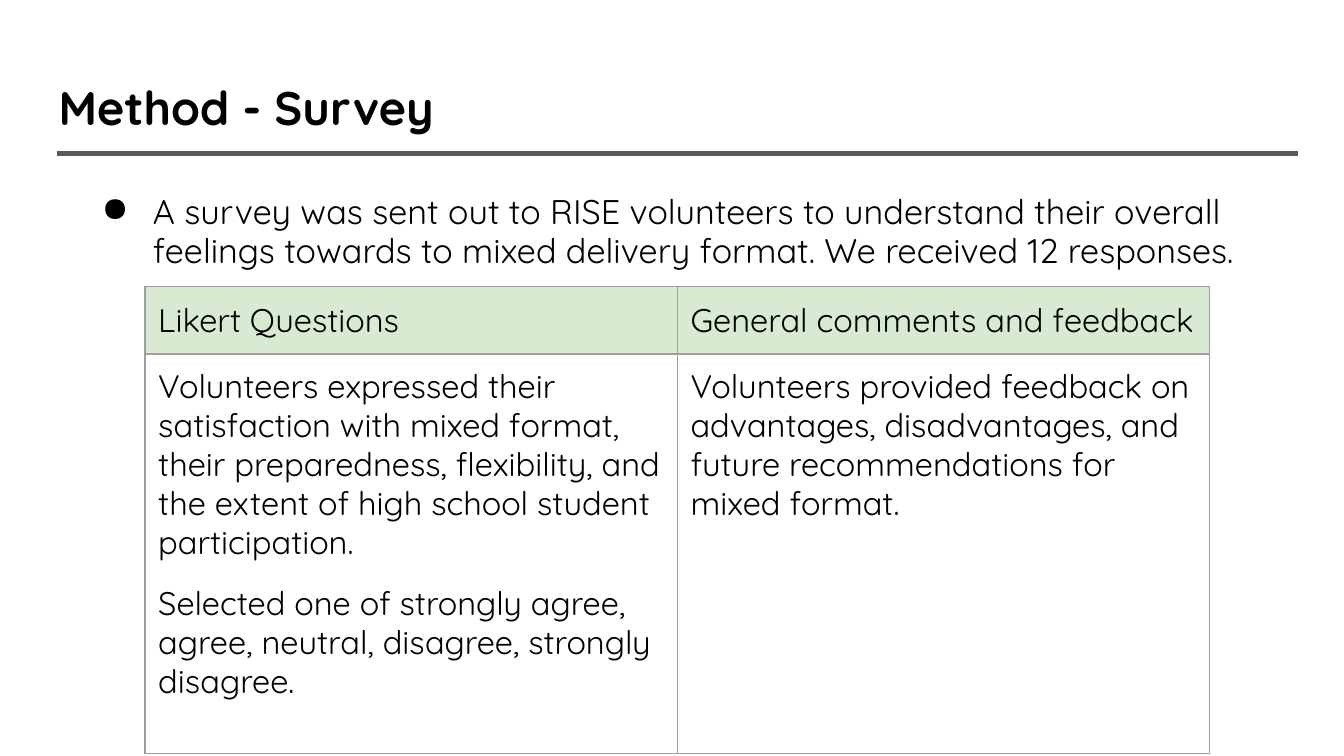
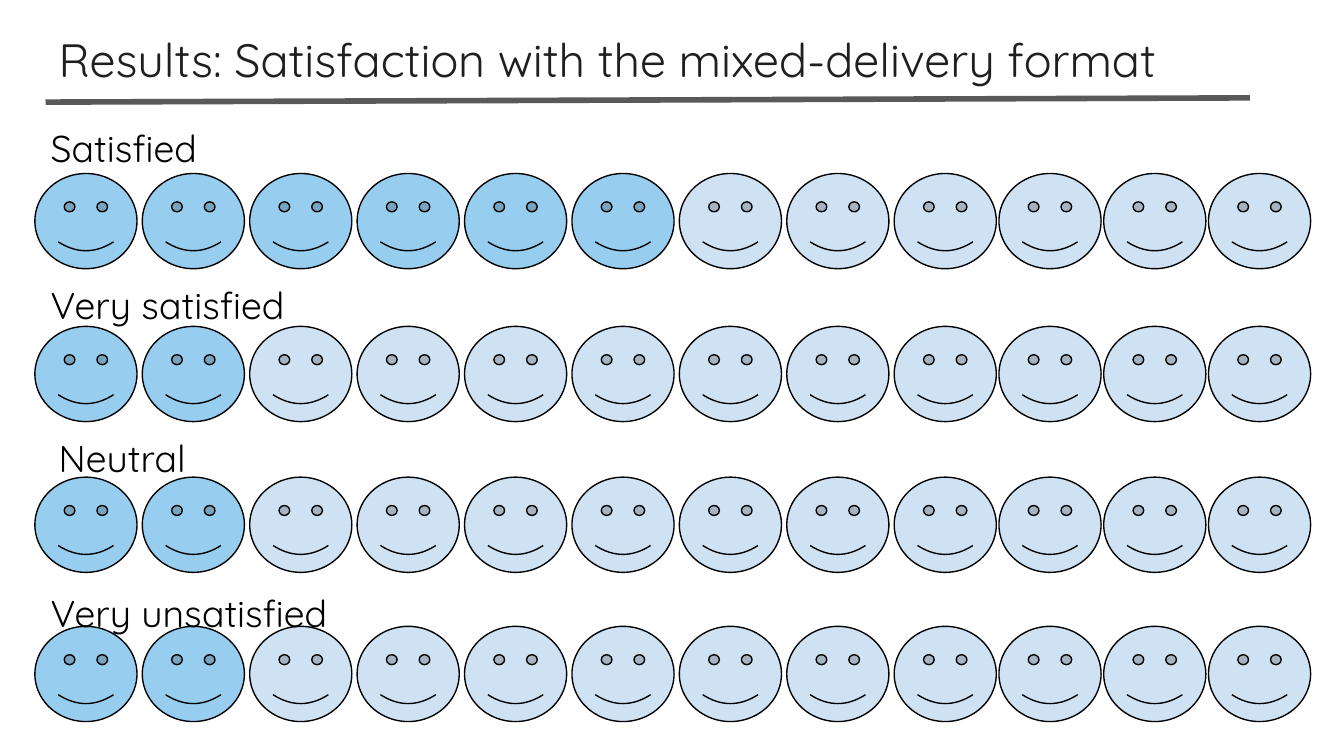
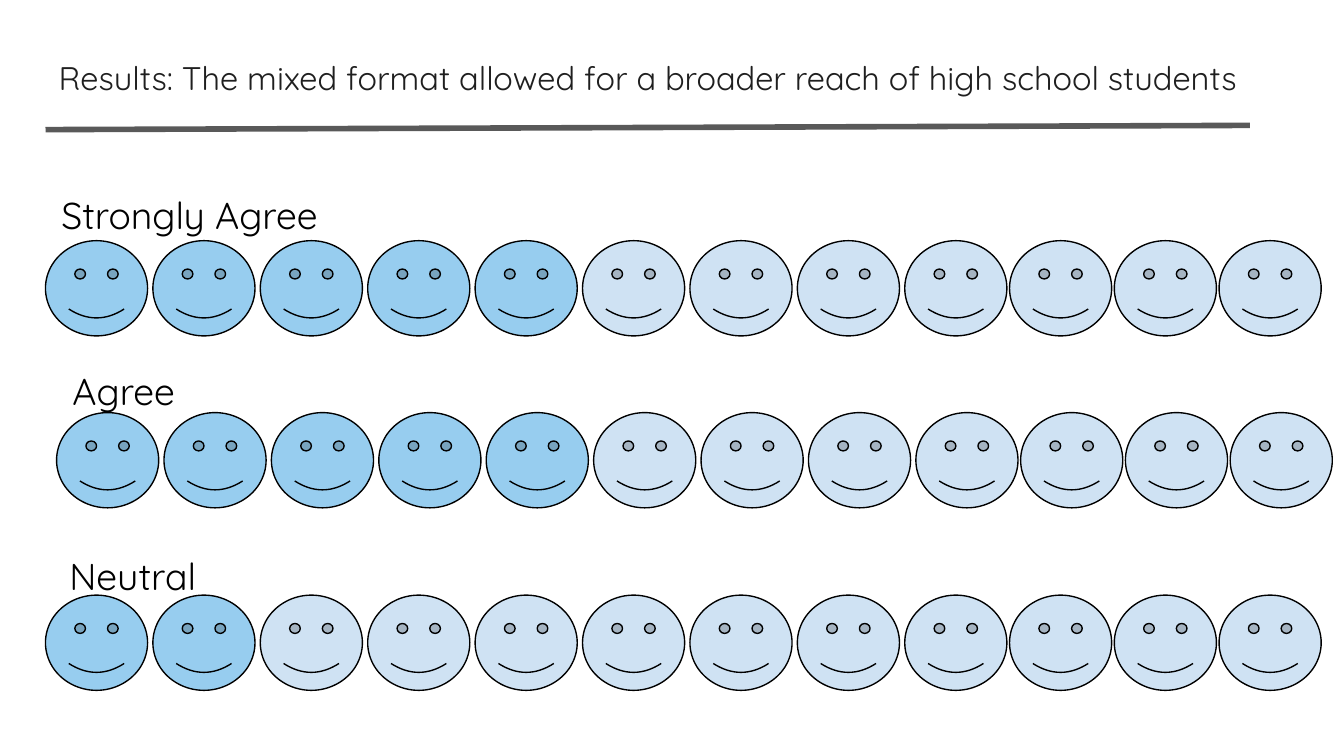
from lxml.etree import SubElement
from pptx import Presentation
from pptx.dml.color import RGBColor
from pptx.enum.shapes import MSO_CONNECTOR, MSO_SHAPE
from pptx.oxml.ns import qn
from pptx.util import Cm, Pt

INK = {
    "text": "000000",
    "soft": "1F1F1F",
    "rule": "595959",
    "grid": "9E9E9E",
    "head": "D9EAD3",
    "full": "97CDEF",
    "pale": "CFE2F3",
    "page": "FFFFFF",
}
FONT = "Quicksand"
PAD = Cm(0.25)
FACES, WIDE, TALL = 12, 1.93, 1.8
STEP, TRIM, SPLIT = 2.03, 0.05, 8
SPOTS = [(0.05, -1.17), (0.05, -1.09), (0.2, -1.04), (0.05, -0.94)]
LONG = (23.09, 1.37)


def tint(name):
    return RGBColor.from_string(INK[name])


def write(frame, *texts, size=20, color="text", bold=False, lead=None, gap=0):
    frame.word_wrap = True
    frame.margin_left = frame.margin_right = PAD
    frame.margin_top = frame.margin_bottom = PAD
    for i, text in enumerate(texts):
        para = frame.add_paragraph() if i else frame.paragraphs[0]
        if lead:
            para.line_spacing = lead
        if i:
            para.space_before = Pt(gap)
        run = para.add_run()
        run.text = text
        font = run.font
        font.name, font.size, font.bold = FONT, Pt(size), bold
        font.color.rgb = tint(color)
    return frame


def label(slide, box, text, **style):
    shape = slide.shapes.add_textbox(*map(Cm, box))
    return write(shape.text_frame, text, **style)


def header(slide, text, top, rule, **style):
    label(slide, (0.86, top, 23.67, 1.6), text, **style)
    left, right, start, end = rule
    line = slide.shapes.add_connector(
        MSO_CONNECTOR.STRAIGHT, Cm(left), Cm(top + start), Cm(right), Cm(top + end))
    line.line.color.rgb = tint("rule")
    line.line.width = Pt(3)
    SubElement(line._element.spPr, qn("a:effectLst"))


def bullet(frame):
    props = frame.paragraphs[0]._p.get_or_add_pPr()
    props.set("marL", str(Cm(1.27)))
    props.set("indent", str(Cm(-0.97)))
    color = SubElement(props, qn("a:buClr"))
    SubElement(color, qn("a:srgbClr"), val=INK["text"])
    SubElement(props, qn("a:buChar"), char="●")


def border(cell):
    props = cell._tc.get_or_add_tcPr()
    for i, side in enumerate(("lnL", "lnR", "lnT", "lnB")):
        line = props.makeelement(qn("a:" + side), {"w": str(Pt(0.75))})
        fill = SubElement(line, qn("a:solidFill"))
        SubElement(fill, qn("a:srgbClr"), val=INK["grid"])
        props.insert(i, line)


def grid(slide, box, rows, highs):
    left, top, width, height = map(Cm, box)
    table = slide.shapes.add_table(len(rows), len(rows[0]), left, top, width, height).table
    table.first_row = table.horz_banding = False
    for r, (row, high) in enumerate(zip(rows, highs)):
        table.rows[r].height = Cm(high)
        for c, texts in enumerate(row):
            cell = table.cell(r, c)
            cell.margin_left = cell.margin_right = PAD
            cell.margin_top = cell.margin_bottom = PAD
            write(cell.text_frame, *texts, size=17.5, lead=0.95 if r else None, gap=12)
            if r:
                cell.fill.background()
            else:
                cell.fill.solid()
                cell.fill.fore_color.rgb = tint("head")
            border(cell)


def face(slide, left, top, color):
    shape = slide.shapes.add_shape(
        MSO_SHAPE.SMILEY_FACE, Cm(left), Cm(top), Cm(WIDE), Cm(TALL))
    shape.shadow.inherit = False
    shape.fill.solid()
    shape.fill.fore_color.rgb = tint(color)
    shape.line.color.rgb = tint("text")
    shape.line.width = Pt(0.75)


def crowd(slide, left, top, count):
    for i in range(FACES):
        shift = STEP * i - TRIM * max(i - SPLIT, 0)
        face(slide, left + shift, top, "full" if i < count else "pale")


def survey(slide):
    header(slide, "Method - Survey", 1.24, (1.07, 24.54, 1.66, 1.66), size=25.2, bold=True)
    grid(slide, (2.74, 5.41, 20.12, 8.84), [
        [["Likert Questions"], ["General comments and feedback"]],
        [["Volunteers expressed their satisfaction with mixed format, their "
          "preparedness, flexibility, and the extent of high school student "
          "participation.",
          "Selected one of strongly agree, agree, neutral, disagree, strongly disagree."],
         ["Volunteers provided feedback on advantages, disadvantages, and future "
          "recommendations for mixed format."]],
    ], (1.28, 7.56))
    bullet(label(
        slide, (1.37, 3.4, 23.52, 2.01),
        "A survey was sent out to RISE volunteers to understand their overall feelings "
        "towards to mixed delivery format. We received 12 responses.",
        size=18.3, lead=0.95))


def result(slide, title, top, size, rows):
    for _, count, left, high, _ in rows:
        crowd(slide, left, high, count)
    header(slide, title, top, (0.86, 23.62, 1.6, 1.52), size=size, color="soft")
    for (text, _, left, high, area), (dx, dy) in zip(rows, SPOTS):
        label(slide, (left + dx, high + dy, *area), text)


def main():
    deck = Presentation()
    deck.slide_width, deck.slide_height = Cm(25.4), Cm(14.29)

    def page():
        slide = deck.slides.add_slide(deck.slide_layouts[6])
        slide.background.fill.solid()
        slide.background.fill.fore_color.rgb = tint("page")
        return slide

    survey(page())
    result(page(), "Results: Satisfaction with the mixed-delivery format", 0.33, 25, [
        ("Satisfied", 6, 0.66, 3.28, (3.99, 0.97)),
        ("Very satisfied", 2, 0.66, 6.17, LONG),
        ("Neutral", 2, 0.66, 9.02, LONG),
        ("Very unsatisfied", 2, 0.66, 11.84, LONG),
    ])
    result(
        page(),
        "Results: The mixed format allowed for a broader reach of high school students",
        0.85, 17.5, [
            ("Strongly Agree", 5, 0.86, 4.55, (5.92, 0.97)),
            ("Agree", 5, 1.07, 7.8, LONG),
            ("Neutral", 2, 0.86, 11.25, LONG),
        ])
    deck.save("out.pptx")


if __name__ == "__main__":
    main()
